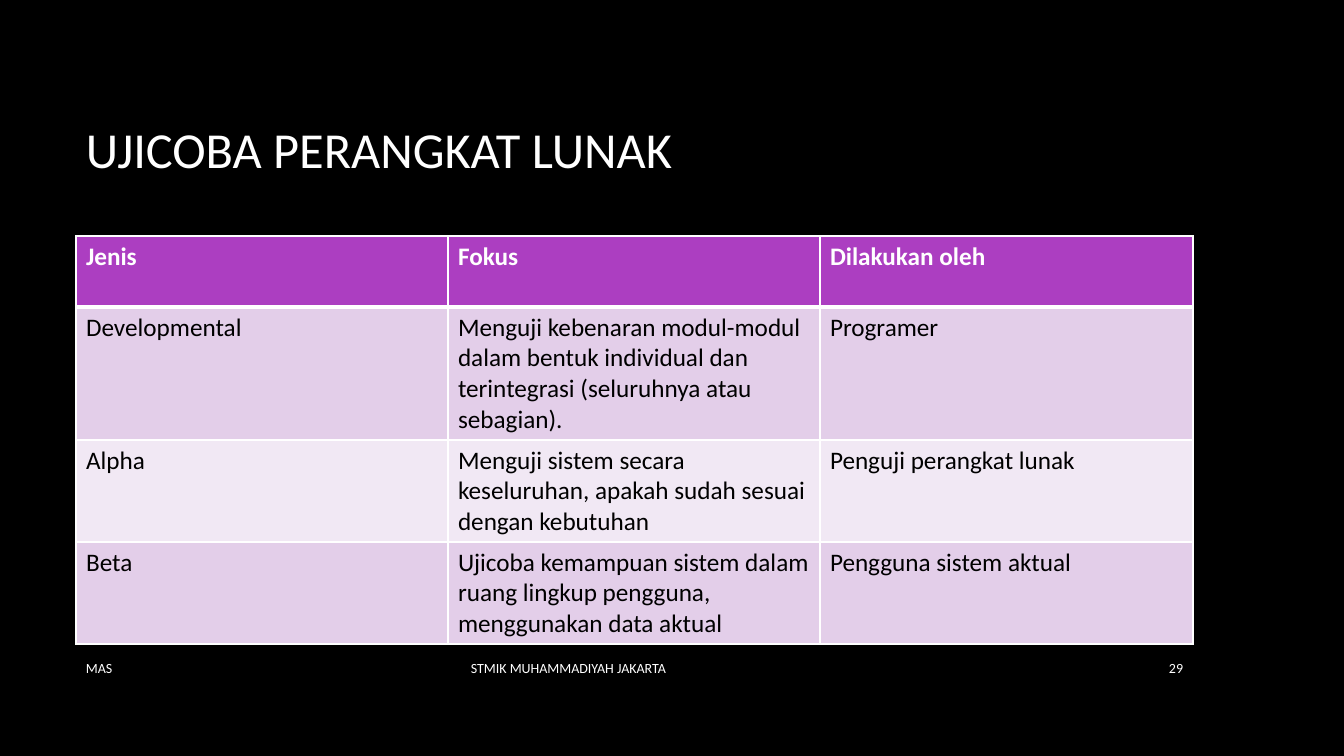
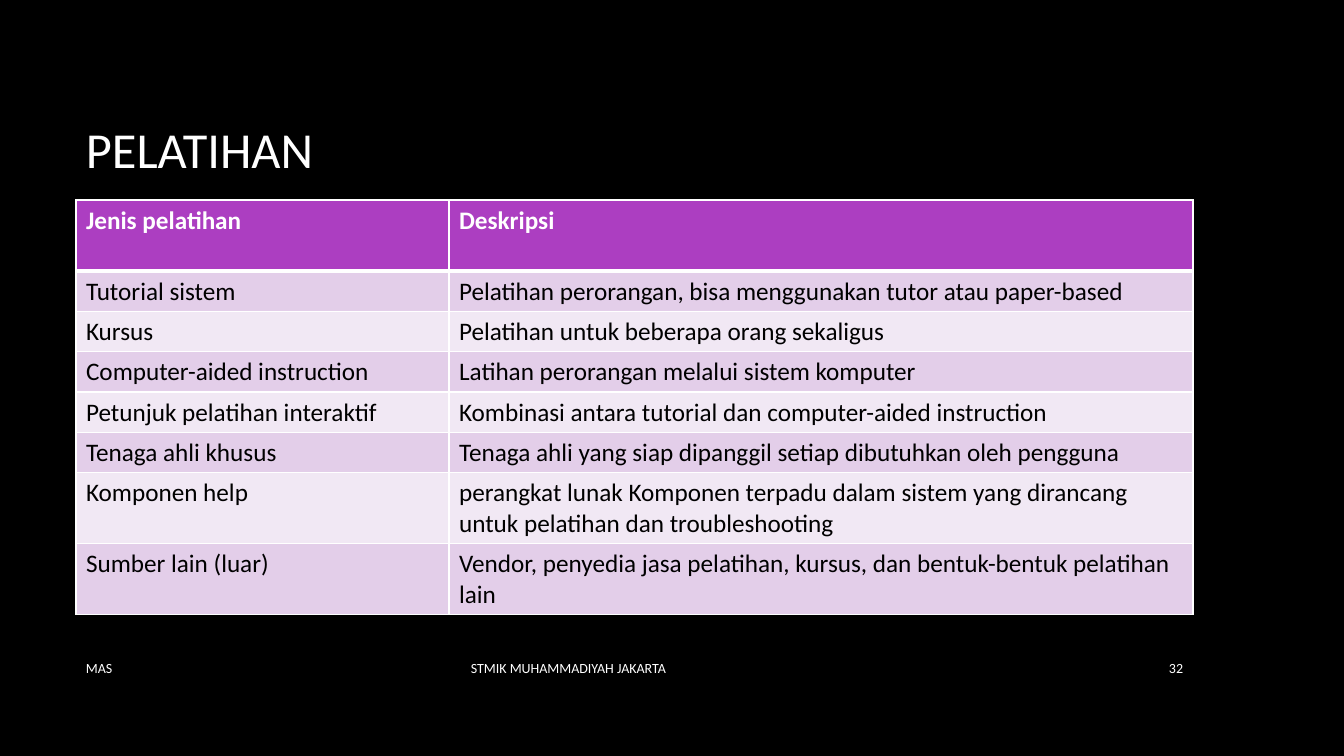
import lxml.etree
import pptx
import pptx.dml.color
import pptx.enum.text
import pptx.oxml.ns
import pptx.util

# Shared scale, colours and layout (lengths in px)
SLIDE_WIDTH, SLIDE_HEIGHT = 1344, 756
EMU_PER_PX = pptx.util.Inches(40 / 3) / SLIDE_WIDTH
FONT = "Calibri"
BLACK, WHITE = "000000", "FFFFFF"
HEADER_FILL = "AC3EC1"
BAND_FILLS = ("E3CEE9", "F1E8F4")
LEFT, CONTENT_WIDTH = 76, 1117
TITLE_BOX = (LEFT, 68, CONTENT_WIDTH, 160)
FOOTER_BOX = (LEFT, 647, CONTENT_WIDTH, 41)
LINE_HEIGHT, CELL_PADDING = 31, 9
ANCHOR = pptx.enum.text.MSO_ANCHOR
ALIGN = pptx.enum.text.PP_ALIGN


def px(length):
    return pptx.util.Emu(round(length * EMU_PER_PX))


def color(hex_string):
    return pptx.dml.color.RGBColor.from_string(hex_string)


def write_text(text_frame, text, *, size, text_color=WHITE, bold=False, align=ALIGN.LEFT, tab=None):
    """Fill the first paragraph, with an optional tab stop in px."""
    text_frame.word_wrap = True
    paragraph = text_frame.paragraphs[0]
    paragraph.alignment = align
    if tab is not None:
        properties = paragraph._p.get_or_add_pPr()
        tabs = lxml.etree.SubElement(properties, pptx.oxml.ns.qn("a:tabLst"))
        lxml.etree.SubElement(tabs, pptx.oxml.ns.qn("a:tab"), pos=str(px(tab)), algn="l")
    run = paragraph.add_run()
    run.text = text
    run.font.name = FONT
    run.font.size = pptx.util.Pt(size)
    run.font.bold = bold
    run.font.color.rgb = color(text_color)


def add_text(slide, box, text, **text_format):
    shape = slide.shapes.add_textbox(*map(px, box))
    shape.text_frame.vertical_anchor = ANCHOR.MIDDLE
    write_text(shape.text_frame, text, **text_format)


def set_borders(cell, **widths):
    """Draw white cell borders; widths in points by side: L, R, T, B."""
    properties = cell._tc.get_or_add_tcPr()
    for side, width in widths.items():
        line = lxml.etree.SubElement(
            properties, pptx.oxml.ns.qn(f"a:ln{side}"), w=str(pptx.util.Pt(width)))
        fill = lxml.etree.SubElement(line, pptx.oxml.ns.qn("a:solidFill"))
        lxml.etree.SubElement(fill, pptx.oxml.ns.qn("a:srgbClr"), val=WHITE)


def add_banded_table(slide, top, column_widths, rows, line_counts):
    """Row heights follow the number of text lines in each row."""
    heights = [CELL_PADDING + LINE_HEIGHT * count for count in line_counts]
    frame = slide.shapes.add_table(
        len(rows), len(column_widths),
        px(LEFT), px(top), px(sum(column_widths)), px(sum(heights)))
    table = frame.table
    table.horz_banding = False
    for column, width in zip(table.columns, column_widths):
        column.width = px(width)
    for row_index, (texts, height) in enumerate(zip(rows, heights)):
        table.rows[row_index].height = px(height)
        is_header = row_index == 0
        for column_index, text in enumerate(texts):
            cell = table.cell(row_index, column_index)
            # A thick rule separates the header from the body
            set_borders(cell, L=1, R=1, T=3 if row_index == 1 else 1, B=3 if is_header else 1)
            cell.fill.solid()
            cell.fill.fore_color.rgb = color(
                HEADER_FILL if is_header else BAND_FILLS[(row_index - 1) % 2])
            write_text(cell.text_frame, text, size=18, bold=is_header,
                       text_color=WHITE if is_header else BLACK)


def add_footer(slide, box, number):
    left, top, width, height = box
    number_width = 60
    add_text(slide, (left, top, 863, height),
             "MAS\tSTMIK MUHAMMADIYAH JAKARTA", size=10, tab=385)
    add_text(slide, (left + width - number_width, top, number_width, height),
             str(number), size=10, align=ALIGN.RIGHT)


def add_table_slide(presentation, title, number, **table):
    slide = presentation.slides.add_slide(presentation.slide_layouts[6])
    slide.background.fill.solid()
    slide.background.fill.fore_color.rgb = color(BLACK)
    add_text(slide, TITLE_BOX, title, size=36)
    add_banded_table(slide, **table)
    add_footer(slide, FOOTER_BOX, number)


def main():
    presentation = pptx.Presentation()
    presentation.slide_width = px(SLIDE_WIDTH)
    presentation.slide_height = px(SLIDE_HEIGHT)

    # Software testing
    add_table_slide(
        presentation, "UJICOBA PERANGKAT LUNAK", 29,
        top=236, column_widths=(372, 372, 373), line_counts=(2, 4, 3, 3),
        rows=[
            ("Jenis", "Fokus", "Dilakukan oleh"),
            ("Developmental",
             "Menguji kebenaran modul-modul dalam bentuk individual dan "
             "terintegrasi (seluruhnya atau sebagian).",
             "Programer"),
            ("Alpha",
             "Menguji sistem secara keseluruhan, apakah sudah sesuai dengan kebutuhan",
             "Penguji perangkat lunak"),
            ("Beta",
             "Ujicoba kemampuan sistem dalam ruang lingkup pengguna, menggunakan data aktual",
             "Pengguna sistem aktual"),
        ])

    # Training
    add_table_slide(
        presentation, "PELATIHAN", 32,
        top=200, column_widths=(373, 744), line_counts=(2, 1, 1, 1, 1, 1, 2, 2),
        rows=[
            ("Jenis pelatihan", "Deskripsi"),
            ("Tutorial sistem", "Pelatihan perorangan, bisa menggunakan tutor atau paper-based"),
            ("Kursus", "Pelatihan untuk beberapa orang sekaligus"),
            ("Computer-aided instruction", "Latihan perorangan melalui sistem komputer"),
            ("Petunjuk pelatihan interaktif",
             "Kombinasi antara tutorial dan computer-aided instruction"),
            ("Tenaga ahli khusus",
             "Tenaga ahli yang siap dipanggil setiap dibutuhkan oleh pengguna"),
            ("Komponen help",
             "perangkat lunak Komponen terpadu dalam sistem yang dirancang "
             "untuk pelatihan dan troubleshooting"),
            ("Sumber lain (luar)",
             "Vendor, penyedia jasa pelatihan, kursus, dan bentuk-bentuk pelatihan lain"),
        ])

    presentation.save("out.pptx")


if __name__ == "__main__":
    main()
